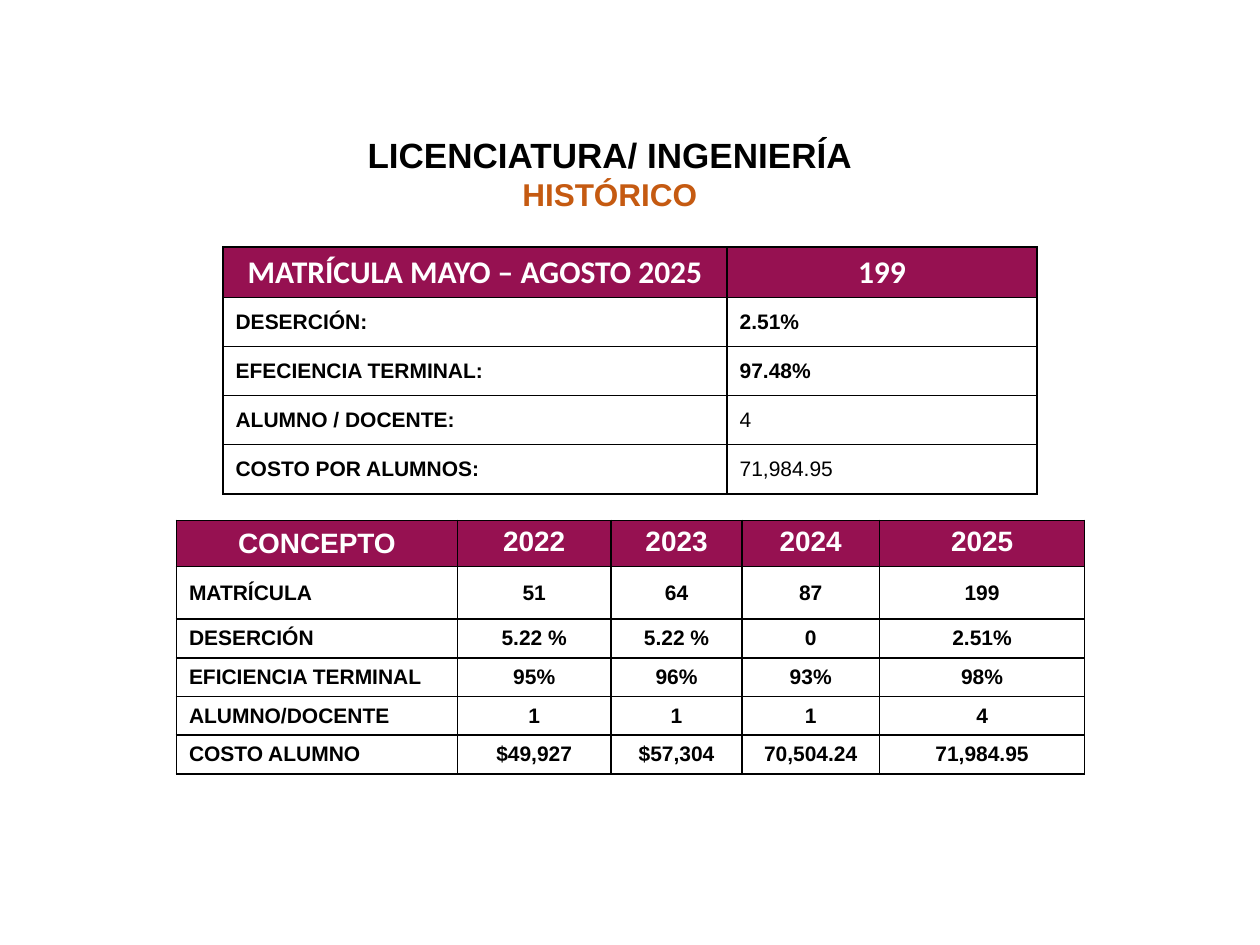
from dataclasses import dataclass

from lxml.etree import SubElement
from pptx import Presentation
from pptx.dml.color import RGBColor
from pptx.enum.text import MSO_ANCHOR as Anchor, PP_ALIGN as Align
from pptx.oxml.ns import qn
from pptx.util import Inches, Pt


@dataclass(frozen=True)
class Theme:
    black: str = "000000"
    white: str = "FFFFFF"
    wine: str = "961151"
    orange: str = "C55A11"
    font: str = "Arial"
    header_font: str = "Calibri"
    title: int = 20
    subtitle: int = 18
    header: int = 16
    body: int = 12


def write(paragraph, text, *, size, color, font, bold=True, align=Align.LEFT):
    paragraph.alignment = align
    run = paragraph.add_run()
    run.text = text
    run.font.size = Pt(size)
    run.font.name = font
    run.font.bold = bold
    run.font.color.rgb = RGBColor.from_string(color)


def outline(cell, color):
    """Draw a one-point line on every side of a cell."""
    properties = cell._tc.get_or_add_tcPr()
    for side in ("lnL", "lnR", "lnT", "lnB"):
        line = SubElement(properties, qn(f"a:{side}"), w=str(Pt(1)))
        fill = SubElement(line, qn("a:solidFill"))
        SubElement(fill, qn("a:srgbClr"), val=color)


class SlideBuilder:
    """Places elements on a grid of 100 columns by 75 rows."""

    COLUMNS, ROWS = 100, 75

    def __init__(self, presentation, theme):
        self.theme = theme
        self.column = presentation.slide_width / self.COLUMNS
        self.row = presentation.slide_height / self.ROWS
        self.slide = presentation.slides.add_slide(presentation.slide_layouts[6])

    def box(self, left, top, width, height):
        return (round(left * self.column), round(top * self.row),
                round(width * self.column), round(height * self.row))

    def heading(self, area, lines):
        frame = self.slide.shapes.add_textbox(*self.box(*area)).text_frame
        frame.word_wrap = True
        for index, (text, size, color) in enumerate(lines):
            paragraph = frame.add_paragraph() if index else frame.paragraphs[0]
            write(paragraph, text, size=size, color=color,
                  font=self.theme.font, align=Align.CENTER)

    def table(self, left, top, widths, heights, records, style_cell):
        """Add a table; style_cell(row, column) gives anchor and text format."""
        area = self.box(left, top, sum(widths), sum(heights))
        grid = self.slide.shapes.add_table(len(heights), len(widths), *area).table
        grid.first_row = grid.horz_banding = False
        for column, width in zip(grid.columns, widths):
            column.width = round(width * self.column)
        for row, height in zip(grid.rows, heights):
            row.height = round(height * self.row)
        for r, record in enumerate(records):
            for c, value in enumerate(record):
                cell = grid.cell(r, c)
                outline(cell, self.theme.black)
                cell.fill.solid()
                cell.fill.fore_color.rgb = RGBColor.from_string(
                    self.theme.white if r else self.theme.wine)
                anchor, text_format = style_cell(r, c)
                cell.vertical_anchor = anchor
                write(cell.text_frame.paragraphs[0], value,
                      color=self.theme.black if r else self.theme.white, **text_format)


SUMMARY = [
    ("MATRÍCULA MAYO – AGOSTO 2025", "199"),
    ("DESERCIÓN:", "2.51%"),
    ("EFECIENCIA TERMINAL:", "97.48%"),
    ("ALUMNO / DOCENTE:", "4"),
    ("COSTO POR ALUMNOS:", "71,984.95"),
]
HISTORY = [
    ("CONCEPTO", "2022", "2023", "2024", "2025"),
    ("MATRÍCULA", "51", "64", "87", "199"),
    ("DESERCIÓN", "5.22 %", "5.22 %", "0", "2.51%"),
    ("EFICIENCIA TERMINAL", "95%", "96%", "93%", "98%"),
    ("ALUMNO/DOCENTE", "1", "1", "1", "4"),
    ("COSTO ALUMNO", "$49,927", "$57,304", "70,504.24", "71,984.95"),
]


def main():
    theme = Theme()

    def summary_style(row, column):
        if row == 0:
            return Anchor.MIDDLE, dict(size=theme.subtitle, font=theme.header_font,
                                       align=Align.CENTER)
        return Anchor.MIDDLE, dict(size=theme.body, font=theme.font,
                                   bold=column == 0 or row < 3)

    def history_style(row, column):
        is_year = row == 0 and column > 0
        is_label = row > 0 and column == 0
        return (Anchor.TOP if is_year else Anchor.MIDDLE,
                dict(size=theme.body if row else theme.header, font=theme.font,
                     align=Align.LEFT if is_label else Align.CENTER))

    presentation = Presentation()
    presentation.slide_width, presentation.slide_height = Inches(10), Inches(7.5)
    builder = SlideBuilder(presentation, theme)
    builder.table(14, 41.3, [22.3, 12.2, 10.4, 10.9, 16.3],
                  [3.65, 4.2] + [3.07] * 4, HISTORY, history_style)
    builder.heading((23.4, 10.1, 50, 7.4), [
        ("LICENCIATURA/ INGENIERÍA", theme.title, theme.black),
        ("HISTÓRICO", theme.subtitle, theme.orange),
    ])
    builder.table(17.7, 19.6, [40, 24.6], [3.8] + [3.9] * 4, SUMMARY, summary_style)
    presentation.save("out.pptx")


if __name__ == "__main__":
    main()
